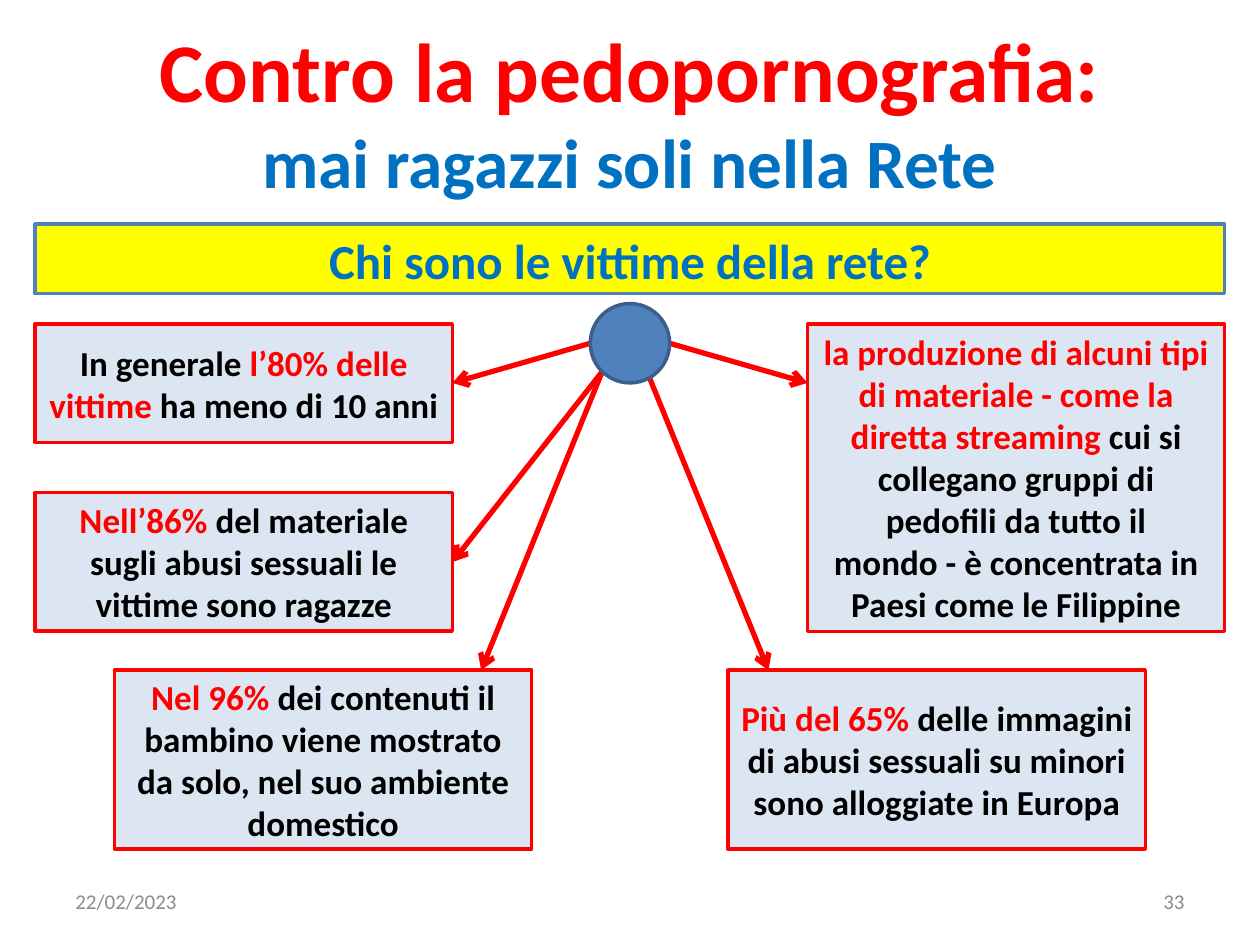
from dataclasses import dataclass

from lxml import etree
from pptx import Presentation
from pptx.dml.color import RGBColor
from pptx.enum.shapes import MSO_CONNECTOR, MSO_SHAPE
from pptx.enum.text import MSO_ANCHOR, PP_ALIGN
from pptx.oxml.ns import qn
from pptx.shapes.autoshape import Shape
from pptx.slide import Slide
from pptx.util import Cm, Pt

RECTANGLE, OVAL = MSO_SHAPE.RECTANGLE, MSO_SHAPE.OVAL
STRAIGHT = MSO_CONNECTOR.STRAIGHT
TOP, MIDDLE = MSO_ANCHOR.TOP, MSO_ANCHOR.MIDDLE
LEFT, CENTER, RIGHT = PP_ALIGN.LEFT, PP_ALIGN.CENTER, PP_ALIGN.RIGHT

COLORS = {
    "red": "FF0000",
    "blue": "0070C0",
    "black": "000000",
    "gray": "8C8C8C",
    "yellow": "FFFF00",
    "pale": "DCE6F2",
    "accent": "4F81BD",
    "accent_dark": "3A5F8C",
}
FONT = "Calibri"
SLIDE_WIDTH, SLIDE_HEIGHT = 25.4, 19.05
MARGIN = 0.71
CONTENT_WIDTH = SLIDE_WIDTH - 2 * MARGIN
BOX_WIDTH = 8.41
OUTER_LEFT, INNER_LEFT = MARGIN, 2.31
OUTER_RIGHT = SLIDE_WIDTH - OUTER_LEFT - BOX_WIDTH
INNER_RIGHT = SLIDE_WIDTH - INNER_LEFT - BOX_WIDTH
UPPER_TOP, LOWER_TOP, LOWER_HEIGHT = 6.53, 13.51, 3.61
HUB_SIZE, HUB_TOP = 1.6, 6.12
HUB_LEFT = (SLIDE_WIDTH - HUB_SIZE) / 2
HUB_MIDDLE = HUB_TOP + HUB_SIZE / 2


@dataclass(frozen=True)
class Area:
    left: float
    top: float
    width: float
    height: float


@dataclass(frozen=True)
class TextRun:
    text: str
    color: str
    size: float = 20
    bold: bool = True


@dataclass(frozen=True)
class FactBox:
    area: Area
    paragraphs: list[list[TextRun]]


@dataclass(frozen=True)
class Arrow:
    start: tuple[float, float]
    end: tuple[float, float]


FACT_BOXES = [
    FactBox(Area(OUTER_LEFT, UPPER_TOP, BOX_WIDTH, 2.39), [[
        TextRun("In generale ", "black"),
        TextRun("l’80% delle vittime", "red"),
        TextRun(" ha meno di 10 anni", "black"),
    ]]),
    FactBox(Area(OUTER_LEFT, 9.93, BOX_WIDTH, 2.79), [[
        TextRun("Nell’86% ", "red"),
        TextRun("del materiale sugli abusi sessuali le vittime sono ragazze", "black"),
    ]]),
    FactBox(Area(INNER_LEFT, LOWER_TOP, BOX_WIDTH, LOWER_HEIGHT), [[
        TextRun("Nel 96% ", "red"),
        TextRun("dei contenuti il bambino viene mostrato da solo, "
                "nel suo ambiente domestico", "black"),
    ]]),
    FactBox(Area(INNER_RIGHT, LOWER_TOP, BOX_WIDTH, LOWER_HEIGHT), [[
        TextRun("Più del 65% ", "red"),
        TextRun("delle immagini di abusi sessuali su minori "
                "sono alloggiate in Europa", "black"),
    ]]),
    FactBox(Area(OUTER_RIGHT, UPPER_TOP, BOX_WIDTH, 6.2), [
        [
            TextRun("la produzione di alcuni tipi di materiale - "
                    "come la diretta streaming ", "red"),
            TextRun("cui si collegano gruppi di pedofili da tutto il", "black"),
        ],
        [TextRun("mondo - è concentrata in Paesi come le Filippine", "black")],
    ]),
]
ARROWS = [
    Arrow((HUB_LEFT, HUB_MIDDLE), (OUTER_LEFT + BOX_WIDTH, 7.72)),
    Arrow((HUB_LEFT + HUB_SIZE, HUB_MIDDLE), (OUTER_RIGHT, 7.72)),
    Arrow((12.14, 7.49), (OUTER_LEFT + BOX_WIDTH, 11.33)),
    Arrow((12.14, 7.49), (9.7, LOWER_TOP)),
    Arrow((12.9, 7.14), (15.49, LOWER_TOP)),
]


def color(name: str) -> RGBColor:
    """Return the named palette colour."""
    return RGBColor.from_string(COLORS[name])


def lengths(area: Area) -> tuple[Cm, Cm, Cm, Cm]:
    """Convert an area to slide lengths."""
    return Cm(area.left), Cm(area.top), Cm(area.width), Cm(area.height)


def write_text(shape: Shape, paragraphs: list[list[TextRun]],
               alignment: PP_ALIGN = CENTER, anchor: MSO_ANCHOR = MIDDLE) -> None:
    """Fill a shape with formatted paragraphs, honouring line breaks."""
    frame = shape.text_frame
    frame.word_wrap = True
    frame.vertical_anchor = anchor
    for index, text_runs in enumerate(paragraphs):
        paragraph = frame.add_paragraph() if index else frame.paragraphs[0]
        paragraph.alignment = alignment
        for text_run in text_runs:
            run = paragraph.add_run()
            run.text = text_run.text.rstrip("\n")
            run.font.name = FONT
            run.font.size = Pt(text_run.size)
            run.font.bold = text_run.bold
            run.font.color.rgb = color(text_run.color)
            if text_run.text.endswith("\n"):
                paragraph.add_line_break()


def add_label(slide: Slide, area: Area, text_runs: list[TextRun],
              alignment: PP_ALIGN) -> None:
    """Add a plain text box."""
    write_text(slide.shapes.add_textbox(*lengths(area)), [text_runs], alignment)


def add_outlined_shape(slide: Slide, kind: MSO_SHAPE, area: Area,
                       fill: str, line: str) -> Shape:
    """Add a flat shape with a solid fill and outline."""
    shape = slide.shapes.add_shape(kind, *lengths(area))
    shape.shadow.inherit = False
    shape.fill.solid()
    shape.fill.fore_color.rgb = color(fill)
    shape.line.color.rgb = color(line)
    shape.line.width = Pt(2)
    return shape


def add_arrow(slide: Slide, arrow: Arrow) -> None:
    """Add a red arrow with an open head at its end."""
    connector = slide.shapes.add_connector(
        STRAIGHT, *map(Cm, arrow.start), *map(Cm, arrow.end))
    connector.line.color.rgb = color("red")
    connector.line.width = Pt(3)
    line = connector.line._get_or_add_ln()
    etree.SubElement(line, qn("a:tailEnd"), type="arrow")
    etree.SubElement(connector._element.spPr, qn("a:effectLst"))


def main() -> None:
    """Build and save the slide."""
    presentation = Presentation()
    presentation.slide_width = Cm(SLIDE_WIDTH)
    presentation.slide_height = Cm(SLIDE_HEIGHT)
    slide = presentation.slides.add_slide(presentation.slide_layouts[6])

    add_label(slide, Area(MARGIN, 0.74, CONTENT_WIDTH, 3), [
        TextRun("Contro la pedopornografia:\n", "red", 47.7),
        TextRun("mai ragazzi soli nella Rete", "blue", 39.6),
    ], CENTER)
    banner = add_outlined_shape(
        slide, RECTANGLE, Area(MARGIN, 4.52, CONTENT_WIDTH, 1.4), "yellow", "accent")
    write_text(banner, [[TextRun("Chi sono le vittime della rete?", "blue", 28)]],
               anchor=TOP)

    for left, text, alignment in ((1.27, "22/02/2023", LEFT), (18.21, "33", RIGHT)):
        add_label(slide, Area(left, 17.65, 5.92, 1.02),
                  [TextRun(text, "gray", 12, False)], alignment)
    for box in FACT_BOXES:
        shape = add_outlined_shape(slide, RECTANGLE, box.area, "pale", "red")
        write_text(shape, box.paragraphs)
    for arrow in ARROWS:
        add_arrow(slide, arrow)
    add_outlined_shape(slide, OVAL, Area(HUB_LEFT, HUB_TOP, HUB_SIZE, HUB_SIZE),
                       "accent", "accent_dark")
    presentation.save("out.pptx")


if __name__ == "__main__":
    main()
